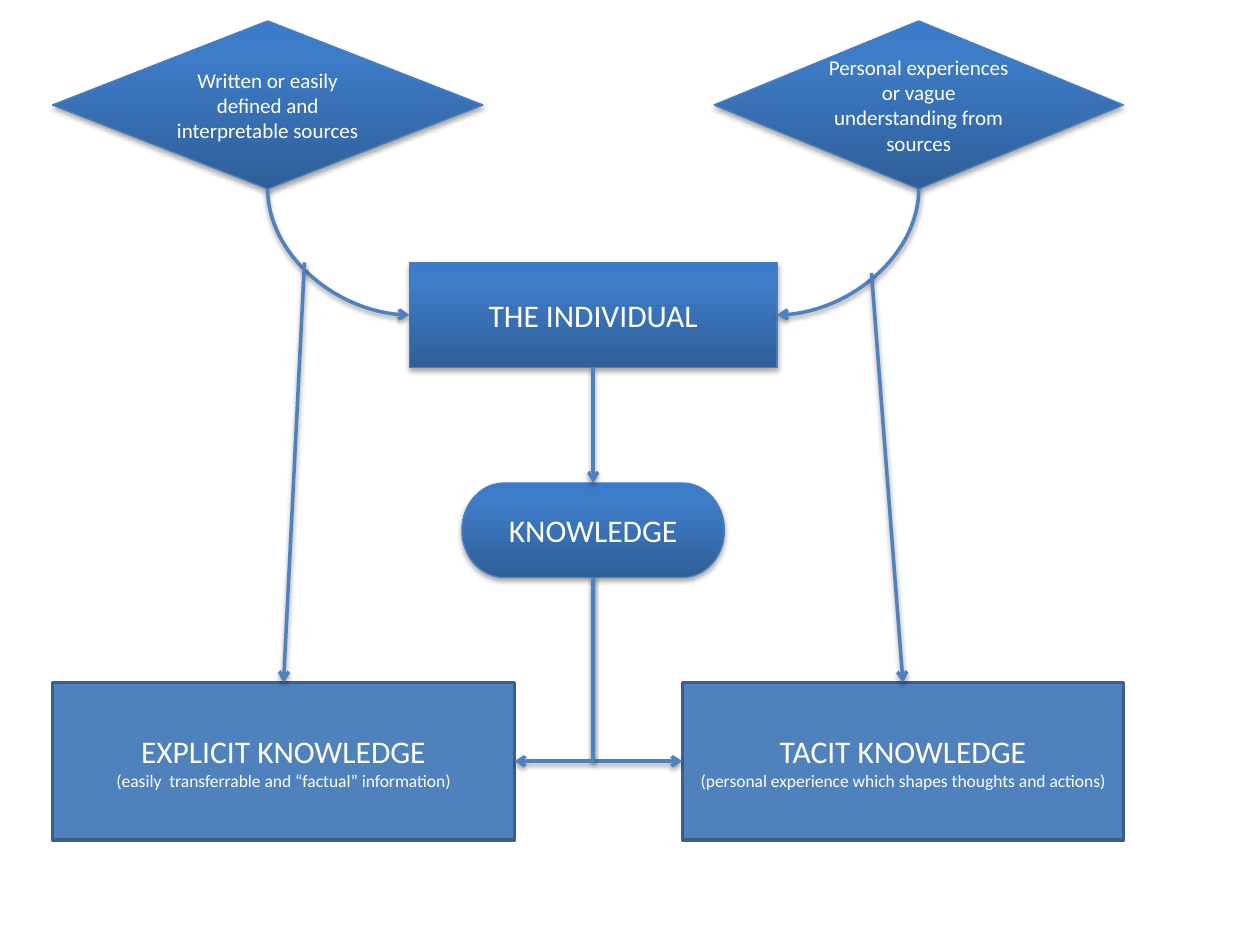
"""Build a slide showing how sources become explicit and tacit knowledge."""
import pptx
import pptx.dml.color
import pptx.enum.shapes
import pptx.enum.text
import pptx.oxml
import pptx.oxml.ns
import pptx.util
from dataclasses import dataclass

KIND = pptx.enum.shapes.MSO_SHAPE
LINK = pptx.enum.shapes.MSO_CONNECTOR
TOP, LEFT, BOTTOM, RIGHT = range(4)
CELL = pptx.util.Inches(10) / 120


@dataclass(frozen=True)
class Theme:
    font: str = "Calibri"
    text: str = "FFFFFF"
    flat: str = "4F81BD"
    flat_edge: str = "3A5F8C"
    glossy_edge: str = "4B7EBC"
    gradient: tuple = ((0, "2F5F99"), (80, "3D7CC7"), (100, "3A7CCB"))
    heading: int = 18
    source: int = 12
    detail: int = 10
    thick: float = 2
    thin: float = 0.75


THEME = Theme()

# name: (kind, (column, row, columns, rows), glossy, [(text, size), ...])
NODES = {
    "tacit": (KIND.RECTANGLE, (65, 65, 42, 15), False, [
        ("TACIT KNOWLEDGE", THEME.heading),
        ("(personal experience which shapes thoughts and actions)", THEME.detail)]),
    "explicit": (KIND.RECTANGLE, (5, 65, 44, 15), False, [
        ("EXPLICIT KNOWLEDGE", THEME.heading),
        ("(easily  transferrable and “factual” information)", THEME.detail)]),
    "individual": (KIND.FLOWCHART_PROCESS, (39, 25, 35, 10), True, [
        ("THE INDIVIDUAL", THEME.heading)]),
    "experiences": (KIND.FLOWCHART_DECISION, (68, 2, 39, 16), True, [
        ("Personal experiences or vague understanding from sources", THEME.source)]),
    "written": (KIND.FLOWCHART_DECISION, (5, 2, 41, 16), True, [
        ("Written or easily defined and interpretable sources", THEME.source)]),
    "knowledge": (KIND.FLOWCHART_TERMINATOR, (44, 46, 25, 9), True, [
        ("KNOWLEDGE", THEME.heading)]),
}

ARROWS = [
    (LINK.CURVE, ("written", BOTTOM), ("individual", LEFT)),
    (LINK.CURVE, ("experiences", BOTTOM), ("individual", RIGHT)),
    (LINK.STRAIGHT, ("individual", BOTTOM), ("knowledge", TOP)),
    (LINK.STRAIGHT, (29, 25), ("explicit", TOP)),
    (LINK.STRAIGHT, (83, 26), ("tacit", TOP)),
    (LINK.ELBOW, ("knowledge", BOTTOM), ("tacit", LEFT)),
    (LINK.ELBOW, ("knowledge", BOTTOM), ("explicit", RIGHT)),
]
CORNERED = {LINK.CURVE: "curvedConnector2", LINK.ELBOW: "bentConnector2"}


def rgb(value):
    return pptx.dml.color.RGBColor.from_string(value)


def grid(*cells):
    return [round(cell * CELL) for cell in cells]


def xml(markup):
    tag, rest = markup[1:].split(" ", 1)
    return pptx.oxml.parse_xml(f"<{tag} {pptx.oxml.ns.nsdecls('a')} {rest}")


def add_shadow(properties, distance, opacity):
    for effects in properties.findall(pptx.oxml.ns.qn("a:effectLst")):
        properties.remove(effects)
    properties.append(xml(
        f'<a:effectLst ><a:outerShdw blurRad="40000" dist="{distance}" dir="5400000" rotWithShape="0">'
        f'<a:srgbClr val="000000"><a:alpha val="{opacity}000"/></a:srgbClr>'
        '</a:outerShdw></a:effectLst>'))


def write(paragraph, text, *, size, color=THEME.text, font=THEME.font):
    paragraph.alignment = pptx.enum.text.PP_ALIGN.CENTER
    run = paragraph.add_run()
    run.text = text
    run.font.name, run.font.size = font, pptx.util.Pt(size)
    run.font.color.rgb = rgb(color)


def paint_gradient(fill, properties):
    fill.gradient()
    fill.gradient_angle = 90
    stops = properties.find(".//" + pptx.oxml.ns.qn("a:gsLst"))
    for stop in list(stops):
        stops.remove(stop)
    for place, color in THEME.gradient:
        stops.append(xml(f'<a:gs pos="{place}000"><a:srgbClr val="{color}"/></a:gs>'))


def add_node(slide, kind, cells, glossy, lines):
    node = slide.shapes.add_shape(kind, *grid(*cells))
    node.shadow.inherit = False
    node.line.color.rgb = rgb(THEME.glossy_edge if glossy else THEME.flat_edge)
    node.line.width = pptx.util.Pt(THEME.thin if glossy else THEME.thick)
    if glossy:
        paint_gradient(node.fill, node._element.spPr)
        add_shadow(node._element.spPr, 23000, 35)
    else:
        node.fill.solid()
        node.fill.fore_color.rgb = rgb(THEME.flat)
    frame = node.text_frame
    frame.word_wrap = True
    frame.vertical_anchor = pptx.enum.text.MSO_ANCHOR.MIDDLE
    for index, (text, size) in enumerate(lines):
        paragraph = frame.add_paragraph() if index else frame.paragraphs[0]
        write(paragraph, text, size=size)
    return node


def turn_corner(arrow, preset):
    x1, y1, x2, y2 = arrow.begin_x, arrow.begin_y, arrow.end_x, arrow.end_y
    width, height = abs(y2 - y1), abs(x2 - x1)
    arrow.left, arrow.top = (x1 + x2 - width) // 2, (y1 + y2 - height) // 2
    arrow.width, arrow.height = width, height
    properties = arrow._element.spPr
    frame = properties.find(pptx.oxml.ns.qn("a:xfrm"))
    rightward = x2 > x1
    frame.set("rot", "16200000" if rightward else "5400000")
    frame.set("flipH", "1" if rightward else "0")
    properties.find(pptx.oxml.ns.qn("a:prstGeom")).set("prst", preset)


def add_arrow(slide, nodes, kind, start, end):
    begin = (0, 0) if start[0] in nodes else grid(*start)
    arrow = slide.shapes.add_connector(kind, *begin, 0, 0)
    if start[0] in nodes:
        arrow.begin_connect(nodes[start[0]], start[1])
    arrow.end_connect(nodes[end[0]], end[1])
    if kind in CORNERED:
        turn_corner(arrow, CORNERED[kind])
    arrow.line.color.rgb = rgb(THEME.flat)
    arrow.line.width = pptx.util.Pt(THEME.thick)
    properties = arrow._element.spPr
    properties.find(pptx.oxml.ns.qn("a:ln")).append(xml('<a:tailEnd type="arrow"/>'))
    add_shadow(properties, 20000, 38)


def main():
    deck = pptx.Presentation()
    deck.slide_width, deck.slide_height = grid(120, 90)
    slide = deck.slides.add_slide(deck.slide_layouts[6])
    nodes = {name: add_node(slide, *node) for name, node in NODES.items()}
    for arrow in ARROWS:
        add_arrow(slide, nodes, *arrow)
    deck.save("out.pptx")


if __name__ == "__main__":
    main()
